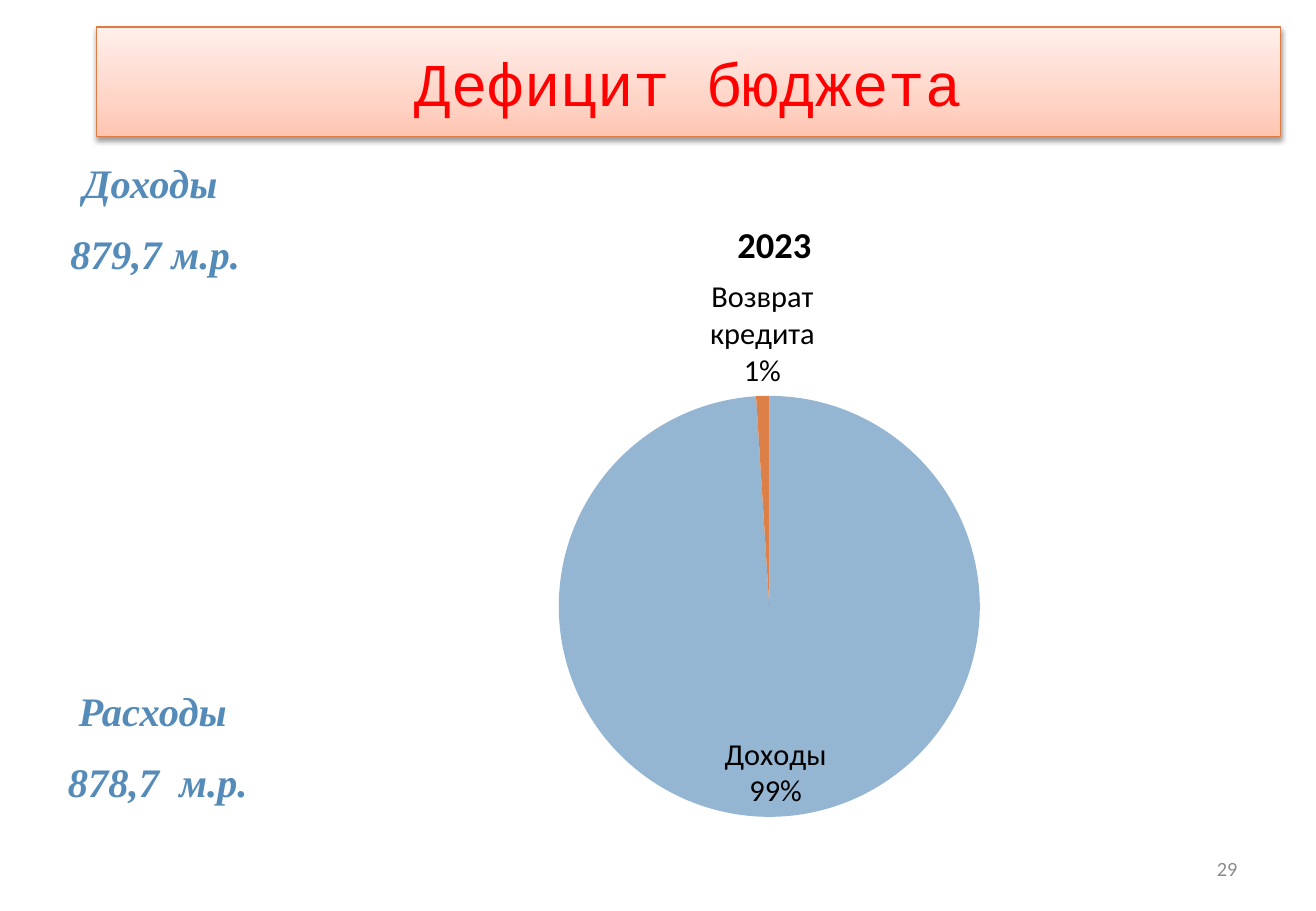
import pptx
import pptx.chart.data
import pptx.dml.color
import pptx.enum.chart
import pptx.enum.text
import pptx.oxml
import pptx.oxml.ns
import pptx.util
from lxml import etree

Pt = pptx.util.Pt
RGBColor = pptx.dml.color.RGBColor
Align = pptx.enum.text.PP_ALIGN
LabelPosition = pptx.enum.chart.XL_LABEL_POSITION
qn = pptx.oxml.ns.qn

RED = RGBColor(0xFF, 0x00, 0x00)
BLACK = RGBColor(0x00, 0x00, 0x00)
GRAY = RGBColor(0x8C, 0x8C, 0x8C)
STEEL_BLUE = RGBColor(0x55, 0x8B, 0xB8)
PALE_BLUE = RGBColor(0x94, 0xB6, 0xD2)
ORANGE = RGBColor(0xDD, 0x80, 0x47)
BORDER = RGBColor(0xDC, 0x7C, 0x42)
PEACH_STOPS = [
    (0, RGBColor(0xFF, 0xC5, 0xB1)),
    (35, RGBColor(0xFF, 0xD5, 0xC8)),
    (100, RGBColor(0xFF, 0xEF, 0xEA)),
]


def format_paragraph(paragraph, alignment, font_name, size, color, bold=False, italic=False):
    paragraph.alignment = alignment
    for run in paragraph.runs:
        font = run.font
        font.name, font.size = font_name, Pt(size)
        font.bold, font.italic = bold, italic
        font.color.rgb = color


def add_gradient(shape, stops):
    """Fill the shape with stops that run from bottom to top."""
    gradient = etree.SubElement(shape.element.spPr, qn("a:gradFill"), rotWithShape="1")
    stop_list = etree.SubElement(gradient, qn("a:gsLst"))
    for percent, color in stops:
        stop = etree.SubElement(stop_list, qn("a:gs"), pos=str(percent * 1000))
        etree.SubElement(stop, qn("a:srgbClr"), val=str(color))
    etree.SubElement(gradient, qn("a:lin"), ang="16200000", scaled="0")


def add_shadow(shape, blur, distance, opacity):
    """Drop a black shadow straight down."""
    shape.shadow.inherit = False
    effects = shape.element.spPr.find(qn("a:effectLst"))
    shadow = etree.SubElement(
        effects, qn("a:outerShdw"), blurRad=str(Pt(blur)), dist=str(Pt(distance)),
        dir="5400000", rotWithShape="0")
    color = etree.SubElement(shadow, qn("a:srgbClr"), val=str(BLACK))
    etree.SubElement(color, qn("a:alpha"), val=str(opacity * 1000))


def format_title(slide, left, top, width, height):
    title = slide.shapes.title
    title.left, title.top, title.width, title.height = map(Pt, (left, top, width, height))
    add_gradient(title, PEACH_STOPS)
    title.line.color.rgb = BORDER
    title.line.width = Pt(0.75)
    add_shadow(title, 3.1, 1.6, 38)
    title.text_frame.text = "Дефицит бюджета"
    title.text_frame.vertical_anchor = pptx.enum.text.MSO_ANCHOR.MIDDLE
    format_paragraph(title.text_frame.paragraphs[0], Align.CENTER, "Courier New", 36, RED)


def add_amount(slide, text, left, top, width, height):
    box = slide.shapes.add_textbox(Pt(left), Pt(top), Pt(width), Pt(height))
    box.text_frame.word_wrap = True
    box.text_frame.text = text
    for paragraph in box.text_frame.paragraphs:
        paragraph.space_after = Pt(13.5)
        format_paragraph(paragraph, Align.CENTER, "Times New Roman", 24, STEEL_BLUE,
                         bold=True, italic=True)


def add_page_number(slide, left, top, width, height):
    box = slide.shapes.add_textbox(Pt(left), Pt(top), Pt(width), Pt(height))
    box.text_frame.word_wrap = True
    box.text_frame.vertical_anchor = pptx.enum.text.MSO_ANCHOR.MIDDLE
    box.text_frame.text = "29"
    format_paragraph(box.text_frame.paragraphs[0], Align.RIGHT, "Calibri", 12, GRAY)


def set_layout(parent, index, **settings):
    """Place a chart part by fractions of the chart's size."""
    for old_layout in parent.findall(qn("c:layout")):
        parent.remove(old_layout)
    layout = pptx.oxml.parse_xml(f"<c:layout {pptx.oxml.ns.nsdecls('c')}/>")
    manual = etree.SubElement(layout, qn("c:manualLayout"))
    for name, value in settings.items():
        etree.SubElement(manual, qn(f"c:{name}"), val=str(value))
    parent.insert(index, layout)


def add_budget_chart(slide, left, top, width, height):
    data = pptx.chart.data.CategoryChartData()
    data.categories = ["Доходы", "Возврат кредита"]
    data.add_series("2023", (99, 1))
    chart = slide.shapes.add_chart(
        pptx.enum.chart.XL_CHART_TYPE.PIE,
        Pt(left), Pt(top), Pt(width), Pt(height), data).chart
    chart.has_legend = False
    chart.font.name, chart.font.size = "Calibri", Pt(18)
    chart.font.color.rgb = BLACK

    chart.has_title = True
    title_frame = chart.chart_title.text_frame
    title_frame.text = "2023"
    format_paragraph(title_frame.paragraphs[0], Align.CENTER, "Calibri", 21.6, BLACK, bold=True)
    set_layout(chart.chart_title.element, 1, xMode="edge", yMode="edge", x=0.46, y=0.05)
    set_layout(next(chart.element.iter(qn("c:plotArea"))), 0, layoutTarget="inner",
               xMode="edge", yMode="edge", x=0.28, y=0.33, w=0.44, h=0.64)

    points = chart.plots[0].series[0].points
    styles = [(PALE_BLUE, LabelPosition.INSIDE_END), (ORANGE, LabelPosition.OUTSIDE_END)]
    for index, (color, position) in enumerate(styles):
        fill = points[index].format.fill
        fill.solid()
        fill.fore_color.rgb = color
        points[index].data_label.position = position
    for label in chart.element.iter(qn("c:dLbl")):
        for name, shown in (("showVal", 0), ("showCatName", 1), ("showPercent", 1)):
            label.find(qn(f"c:{name}")).set("val", str(shown))
        etree.SubElement(label, qn("c:separator")).text = "\n"


def main():
    presentation = pptx.Presentation()
    presentation.slide_width, presentation.slide_height = Pt(780), Pt(540)
    slide = presentation.slides.add_slide(presentation.slide_layouts.get_by_name("Title Only"))
    format_title(slide, 57, 16, 702, 65)
    add_page_number(slide, 558.5, 500, 182, 29)
    add_amount(slide, "Расходы \n878,7  м.р.", 17, 403, 153, 113)
    add_amount(slide, "Доходы \n879,7 м.р.", 0, 90, 184, 80)
    add_budget_chart(slide, 170, 106, 572, 390)
    presentation.save("out.pptx")


if __name__ == "__main__":
    main()
